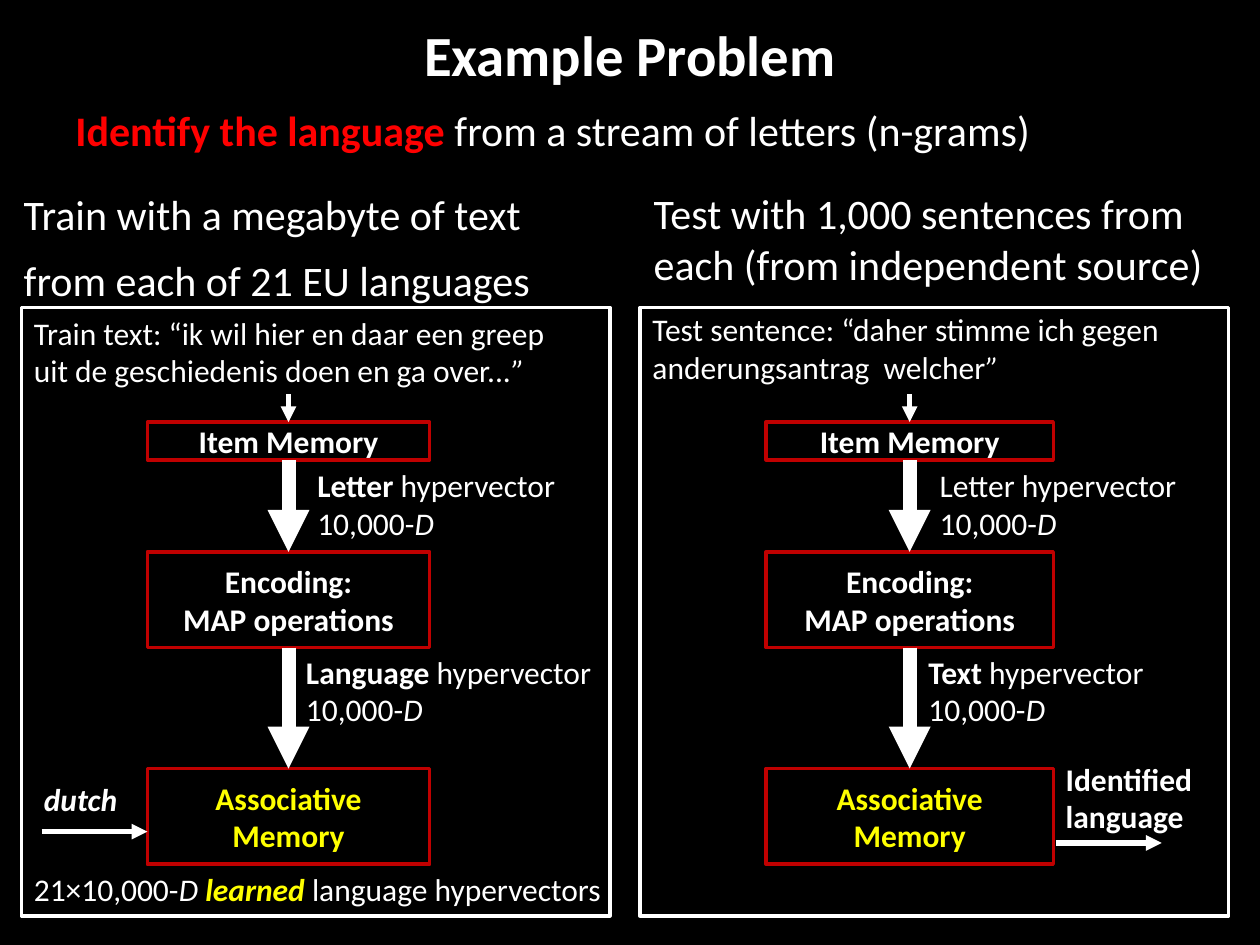
from lxml.etree import SubElement
from pptx import Presentation
from pptx.dml.color import RGBColor
from pptx.enum.shapes import MSO_CONNECTOR, MSO_SHAPE
from pptx.enum.text import MSO_ANCHOR, MSO_AUTO_SIZE, PP_ALIGN
from pptx.oxml.ns import qn
from pptx.util import Inches, Pt

BLACK = RGBColor(0x00, 0x00, 0x00)
WHITE = RGBColor(0xFF, 0xFF, 0xFF)
RED = RGBColor(0xFF, 0x00, 0x00)
DARK_RED = RGBColor(0xC0, 0x00, 0x00)
YELLOW = RGBColor(0xFF, 0xFF, 0x00)
FONT = "Calibri"

PLAIN = {}
BOLD = {"bold": True}
ITALIC = {"italic": True}
BOLD_ITALIC = {"bold": True, "italic": True}
KEYWORD = {"bold": True, "color": RED}
LEARNED = {"bold": True, "italic": True, "color": YELLOW}
MEMORY = {"bold": True, "color": YELLOW}

# Text is a list of paragraphs, each a list of (wording, format) runs.
TITLE = [[("Example Problem", BOLD)]]
DIMENSION = [("10,000-", PLAIN), ("D", ITALIC)]

# (left, top, width, height), line spacing, grows with its text, paragraphs
HEADINGS = [
    ((0.5, 0.7, 9, 0.59), 1.2, False,
     [[("Identify the language ", KEYWORD), ("from a stream of letters (n-grams)", PLAIN)]]),
    ((0.09, 1.33, 4.74, 1.15), 1.3, True,
     [[("Train with a megabyte of text from each of 21 EU languages", PLAIN)]]),
    ((5.09, 1.44, 4.66, 0.91), None, True,
     [[("Test with 1,000 sentences from each (from independent source)", PLAIN)]]),
]

# top, height, paragraphs: the same three stages in both panels
STAGES = [
    (3.35, 0.3, [[("Item Memory", BOLD)]]),
    (4.38, 0.76, [[("Encoding:", BOLD)], [("MAP operations", BOLD)]]),
    (6.1, 0.76, [[("Associative Memory", MEMORY)]]),
]

FRAME_TOP, FRAME_WIDTH, FRAME_HEIGHT = 2.44, 4.67, 4.83
INPUT_ARROW_TOP = 3.13

PANELS = [
    {
        "frame_left": 0.17, "stage_left": 1.17, "stage_width": 2.24,
        "side_arrow": (0.33, 1.17, 6.6),
        "labels": [
            ((0.17, 2.44, 4.58, 0.71),
             [[("Train text: “ik wil hier en daar een greep uit de geschiedenis "
                "doen en ga over...", PLAIN), ("”", ITALIC)]]),
            ((2.42, 3.65, 2.17, 0.71), [[("Letter", BOLD), (" hypervector", PLAIN)], DIMENSION]),
            ((2.33, 5.13, 2.51, 0.71), [[("Language", BOLD), (" hypervector", PLAIN)], DIMENSION]),
            ((0.25, 6.14, 1, 0.4), [[("dutch", BOLD_ITALIC)]]),
            ((0.17, 6.86, 4.75, 0.4),
             [[("21×10,000-", PLAIN), ("D ", ITALIC), ("learned", LEARNED),
               (" language hypervectors", PLAIN)]]),
        ],
    },
    {
        "frame_left": 5.08, "stage_left": 6.08, "stage_width": 2.28,
        "side_arrow": (8.38, 9.22, 6.69),
        "labels": [
            ((5.08, 2.41, 4.58, 0.71),
             [[("Test sentence: “daher stimme ich gegen anderungsantrag  welcher", PLAIN),
               ("”", ITALIC)]]),
            ((7.36, 3.65, 2.21, 0.71), [[("Letter hypervector", PLAIN)], DIMENSION]),
            ((7.27, 5.13, 2.55, 0.71), [[("Text", BOLD), (" hypervector", PLAIN)], DIMENSION]),
            ((8.36, 5.98, 1.3, 0.71), [[("Identified language", BOLD)]]),
        ],
    },
]


def write_text(frame, paragraphs, size, alignment=PP_ALIGN.LEFT, spacing=None):
    frame.word_wrap = True
    for index, runs in enumerate(paragraphs):
        paragraph = frame.paragraphs[0] if index == 0 else frame.add_paragraph()
        paragraph.alignment = alignment
        paragraph.line_spacing = spacing
        for wording, style in runs:
            run = paragraph.add_run()
            run.text = wording
            values = {"name": FONT, "size": Pt(size), "bold": False, "italic": False, **style}
            run.font.color.rgb = values.pop("color", WHITE)
            for name, value in values.items():
                setattr(run.font, name, value)


def add_label(slide, box, paragraphs, size, spacing=None, grows=True):
    frame = slide.shapes.add_textbox(*map(Inches, box)).text_frame
    write_text(frame, paragraphs, size, spacing=spacing)
    frame.auto_size = MSO_AUTO_SIZE.SHAPE_TO_FIT_TEXT if grows else MSO_AUTO_SIZE.NONE


def add_outline(slide, box, color):
    """Add an unfilled rectangle with a coloured border."""
    shape = slide.shapes.add_shape(MSO_SHAPE.RECTANGLE, *map(Inches, box))
    shape.shadow.inherit = False
    shape.fill.background()
    shape.line.color.rgb = color
    shape.line.width = Pt(2)
    return shape


def add_arrow(slide, start, end, width):
    arrow = slide.shapes.add_connector(MSO_CONNECTOR.STRAIGHT, *map(Inches, start + end))
    arrow.line.color.rgb = WHITE
    arrow.line.width = Pt(width)
    SubElement(arrow.line._get_or_add_ln(), qn("a:tailEnd"), type="triangle")
    SubElement(arrow._element.spPr, qn("a:effectLst"))
    return arrow


def add_panel(slide, panel):
    left, width = panel["stage_left"], panel["stage_width"]
    center = left + width / 2
    previous, bottom = None, INPUT_ARROW_TOP
    for top, height, paragraphs in STAGES:
        stage = add_outline(slide, (left, top, width, height), DARK_RED)
        stage.text_frame.vertical_anchor = MSO_ANCHOR.MIDDLE
        write_text(stage.text_frame, paragraphs, 18, PP_ALIGN.CENTER)
        arrow = add_arrow(slide, (center, bottom), (center, top), 8 if previous else 3)
        if previous:
            arrow.begin_connect(previous, 2)
        arrow.end_connect(stage, 0)
        previous, bottom = stage, top + height

    start, end, level = panel["side_arrow"]
    add_arrow(slide, (start, level), (end, level), 3)
    for box, paragraphs in panel["labels"]:
        add_label(slide, box, paragraphs, 18)
    add_outline(slide, (panel["frame_left"], FRAME_TOP, FRAME_WIDTH, FRAME_HEIGHT), WHITE)


def main():
    presentation = Presentation()
    presentation.slide_width, presentation.slide_height = Inches(10), Inches(7.5)
    slide = presentation.slides.add_slide(presentation.slide_layouts[5])
    slide.background.fill.solid()
    slide.background.fill.fore_color.rgb = BLACK

    title = slide.shapes.title
    title.left, title.top, title.width, title.height = map(Inches, (0.5, 0.08, 9, 0.7))
    title.text_frame.vertical_anchor = MSO_ANCHOR.MIDDLE
    title.text_frame.auto_size = MSO_AUTO_SIZE.NONE
    write_text(title.text_frame, TITLE, 32.4, PP_ALIGN.CENTER)

    for box, spacing, grows, paragraphs in HEADINGS:
        add_label(slide, box, paragraphs, 24, spacing, grows)
    for panel in PANELS:
        add_panel(slide, panel)
    presentation.save("out.pptx")


if __name__ == "__main__":
    main()
